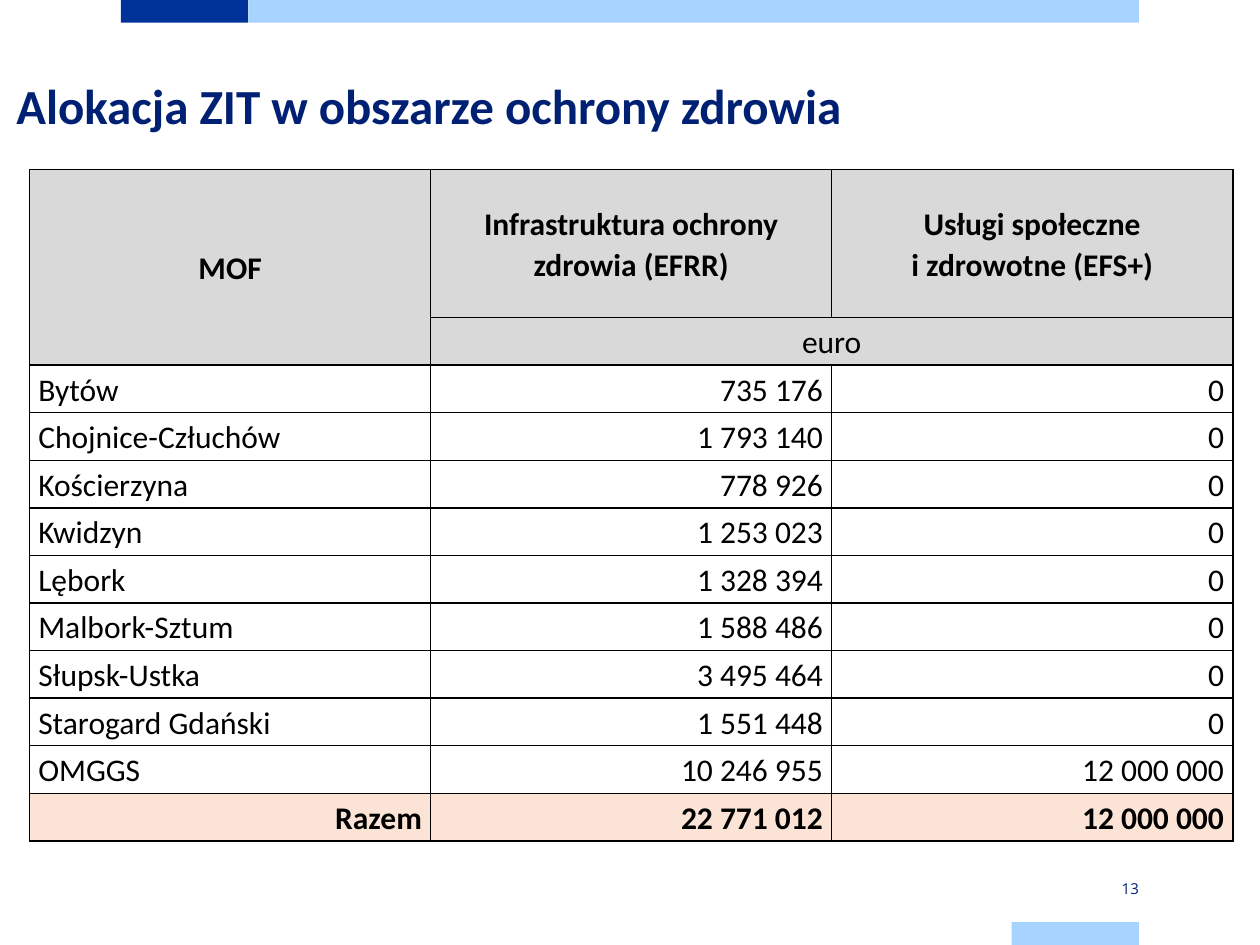
from lxml.etree import SubElement
from pptx import Presentation
from pptx.dml.color import RGBColor
from pptx.enum.shapes import MSO_SHAPE as Shape
from pptx.enum.text import MSO_ANCHOR as Anchor, PP_ALIGN as Align
from pptx.oxml.ns import qn
from pptx.util import Pt

NAVY, BLUE, LIGHT_BLUE = "002073", "003399", "A6D3FF"
BLACK, GREY, PEACH = "000000", "D9D9D9", "FBE4D5"

BARS = [
    ((69.1, 0, 72.8, 13), BLUE),
    ((141.9, 0, 509, 13), LIGHT_BLUE),
    ((578.1, 527, 72.8, 13), LIGHT_BLUE),
]
HEADINGS = ["MOF", "Infrastruktura ochrony zdrowia (EFRR)",
            "Usługi społeczne\vi zdrowotne (EFS+)"]
ALLOCATIONS = [
    ("Bytów", 735176, 0),
    ("Chojnice-Człuchów", 1793140, 0),
    ("Kościerzyna", 778926, 0),
    ("Kwidzyn", 1253023, 0),
    ("Lębork", 1328394, 0),
    ("Malbork-Sztum", 1588486, 0),
    ("Słupsk-Ustka", 3495464, 0),
    ("Starogard Gdański", 1551448, 0),
    ("OMGGS", 10246955, 12000000),
]
HEADER_HEIGHT, ROW_HEIGHT = 84.6, 27.2


def color(value):
    return RGBColor.from_string(value)


def set_attributes(target, values):
    for name, value in values.items():
        setattr(target, name, value)


def write(frame, text, size, font="Calibri", ink=BLACK, bold=False, **paragraph_format):
    paragraph = frame.paragraphs[0]
    paragraph.text = text
    set_attributes(paragraph, paragraph_format)
    set_attributes(paragraph.font, {"name": font, "size": Pt(size), "bold": bold})
    paragraph.font.color.rgb = color(ink)


def add_bar(slide, box, fill):
    bar = slide.shapes.add_shape(Shape.RECTANGLE, *map(Pt, box))
    bar.shadow.inherit = False
    bar.fill.solid()
    bar.fill.fore_color.rgb = color(fill)
    bar.line.fill.background()


def add_text(slide, box, text, size, anchor=Anchor.TOP, **text_format):
    frame = slide.shapes.add_textbox(*map(Pt, box)).text_frame
    set_attributes(frame, {"word_wrap": True, "vertical_anchor": anchor, "margin_left": 0,
                           "margin_right": 0, "margin_top": 0, "margin_bottom": 0})
    write(frame, text, size, **text_format)


def add_borders(cell):
    properties = cell._tc.get_or_add_tcPr()
    for side in ("a:lnL", "a:lnR", "a:lnT", "a:lnB"):
        line = SubElement(properties, qn(side), w=str(Pt(1)))
        SubElement(SubElement(line, qn("a:solidFill")), qn("a:srgbClr"), val=BLACK)


def format_cell(cell, fill):
    """Borders go in first, since the schema wants them before the fill."""
    add_borders(cell)
    if fill:
        cell.fill.solid()
        cell.fill.fore_color.rgb = color(fill)
    else:
        cell.fill.background()
    set_attributes(cell, {"vertical_anchor": Anchor.MIDDLE, "margin_left": Pt(5),
                          "margin_right": Pt(5), "margin_top": 0, "margin_bottom": 0})


def format_euro(amount):
    return f"{amount:,}".replace(",", " ")


def table_rows():
    """Yield each row's texts, alignments, fill and boldness."""
    center, right = [Align.CENTER] * 3, [Align.RIGHT] * 3
    yield HEADINGS, center, GREY, True
    yield ["", "euro", ""], center, GREY, False
    for area, *amounts in ALLOCATIONS:
        yield [area, *map(format_euro, amounts)], [Align.LEFT, *right[1:]], None, False
    _, *columns = zip(*ALLOCATIONS)
    yield ["Razem", *(format_euro(sum(column)) for column in columns)], right, PEACH, True


def add_allocation_table(slide, left, top, width):
    rows = list(table_rows())
    heights = [HEADER_HEIGHT] + [ROW_HEIGHT] * (len(rows) - 1)
    box = map(Pt, (left, top, width, sum(heights)))
    table = slide.shapes.add_table(len(rows), len(HEADINGS), *box).table
    set_attributes(table, {"first_row": False, "horz_banding": False})
    for column in table.columns:
        column.width = Pt(width / len(HEADINGS))
    table.cell(0, 0).merge(table.cell(1, 0))
    table.cell(1, 1).merge(table.cell(1, 2))
    for row, height, (texts, alignments, fill, bold) in zip(table.rows, heights, rows):
        row.height = Pt(height)
        for cell, text, alignment in zip(row.cells, texts, alignments):
            format_cell(cell, fill)
            if not cell.is_spanned:
                write(cell.text_frame, text, 18, bold=bold,
                      alignment=alignment, line_spacing=1.07)


def main():
    presentation = Presentation()
    set_attributes(presentation, {"slide_width": Pt(720), "slide_height": Pt(540)})
    slide = presentation.slides.add_slide(presentation.slide_layouts[6])
    for box, fill in BARS:
        add_bar(slide, box, fill)
    add_text(slide, (9.4, 46.1, 582, 29.5), "Alokacja ZIT w obszarze ochrony zdrowia", 28,
             ink=NAVY, bold=True, line_spacing=Pt(30.8))
    add_text(slide, (578.1, 501.1, 72.8, 13), "13", 8.6, Anchor.MIDDLE,
             font="Open Sans", ink=NAVY, alignment=Align.RIGHT)
    add_allocation_table(slide, 16.9, 96.9, 687.6)
    presentation.save("out.pptx")


if __name__ == "__main__":
    main()
